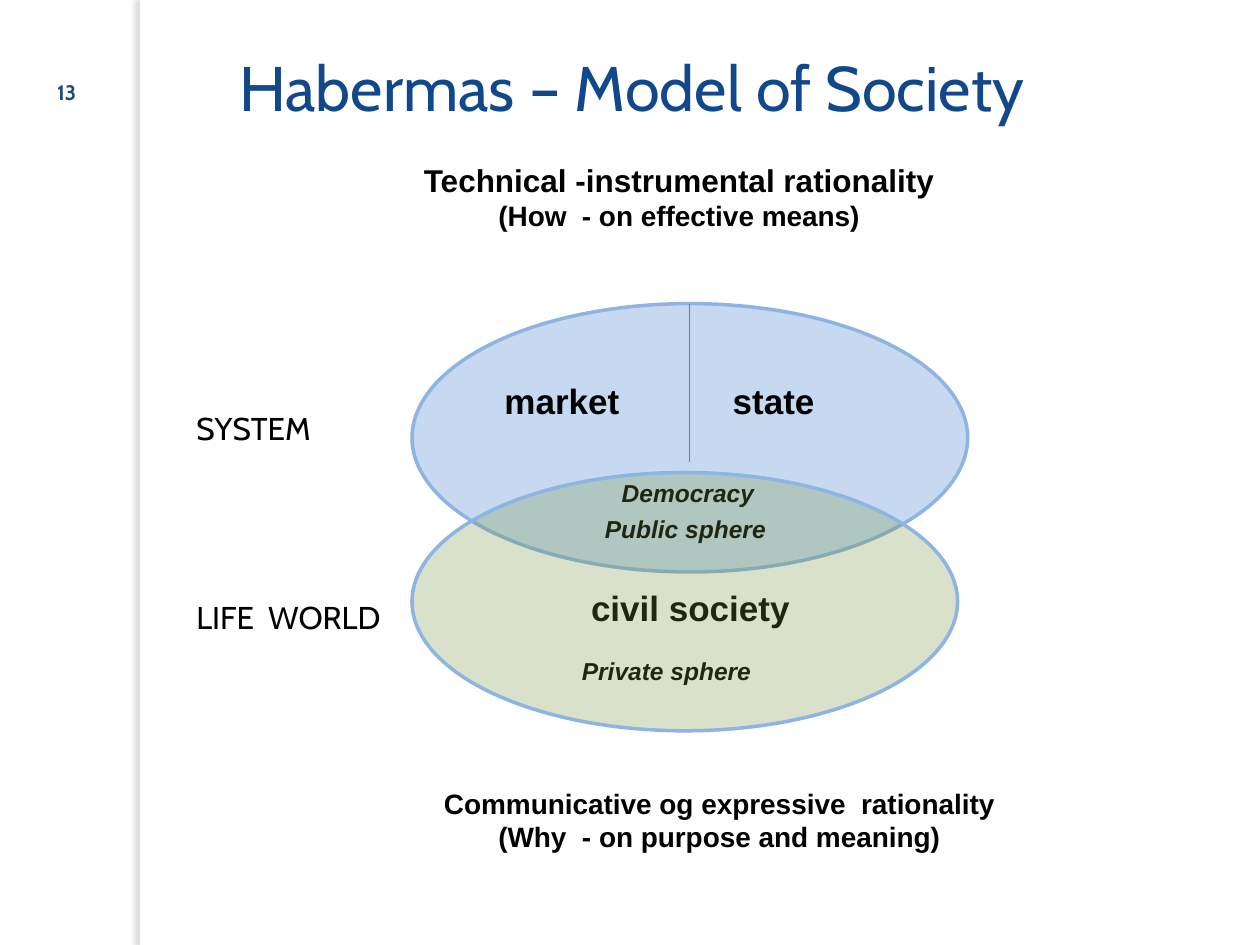
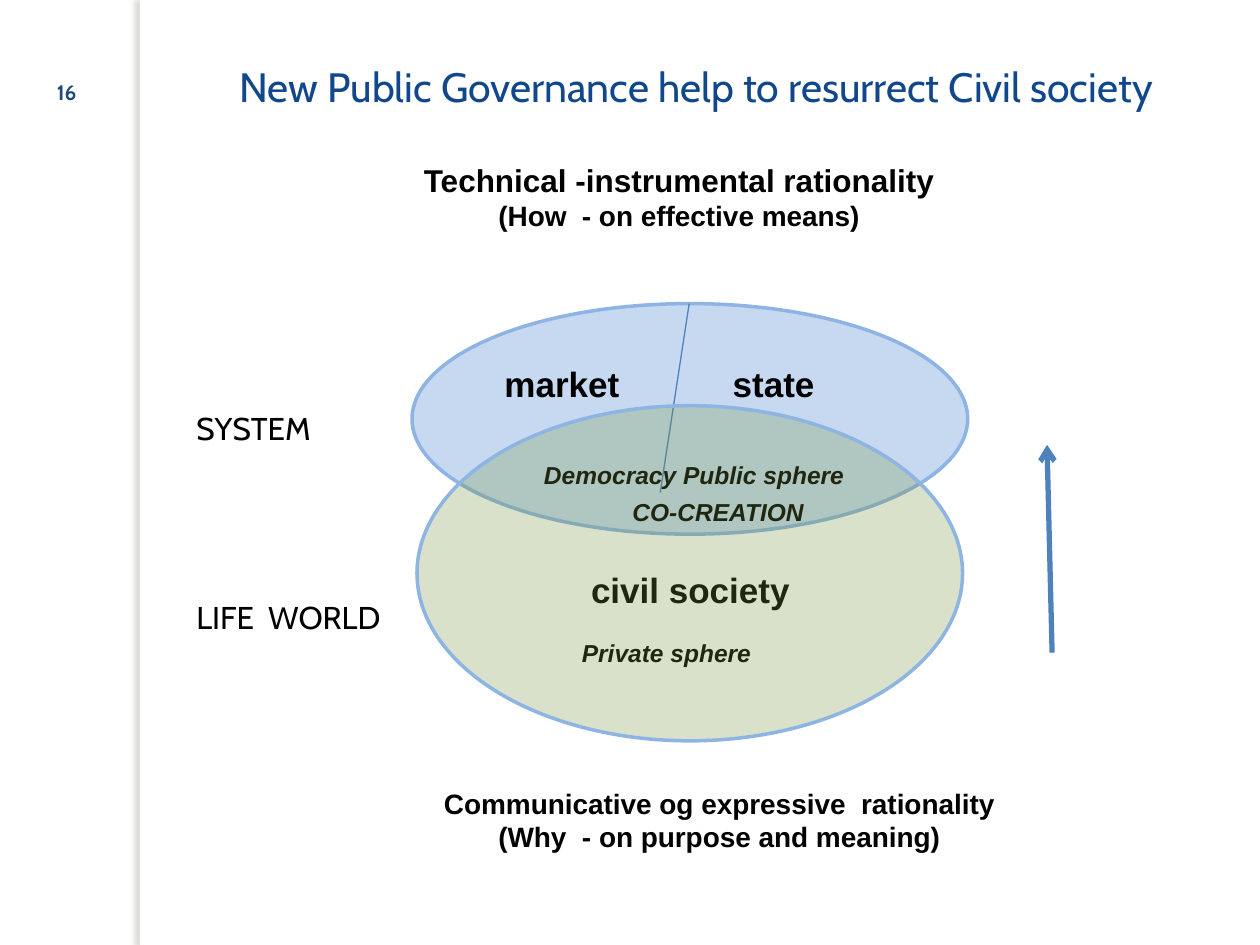
from dataclasses import dataclass

import lxml.etree
import pptx
import pptx.dml.color
import pptx.enum.shapes
import pptx.enum.text
import pptx.oxml.ns
import pptx.util

RGB = pptx.dml.color.RGBColor
SHAPE = pptx.enum.shapes.MSO_SHAPE
ALIGN = pptx.enum.text.PP_ALIGN
ANCHOR = pptx.enum.text.MSO_ANCHOR
qn = pptx.oxml.ns.qn

WHITE = RGB(0xFF, 0xFF, 0xFF)
BLACK = RGB(0x00, 0x00, 0x00)
TITLE_BLUE = RGB(0x11, 0x47, 0x8B)
NUMBER_BLUE = RGB(0x1F, 0x49, 0x7D)
SYSTEM_BLUE = RGB(0xC6, 0xD9, 0xF1)
LIFE_GREEN = RGB(0x77, 0x93, 0x3C)
OUTLINE_BLUE = RGB(0x8E, 0xB4, 0xE3)
LINE_BLUE = RGB(0x4F, 0x81, 0xBD)
HEADING_FONT, BODY_FONT = "Cabin", "Arial"

SLIDE_WIDTH = pptx.util.Inches(10)
SLIDE_HEIGHT = pptx.util.Inches(7.5)
COLUMNS, ROWS = 100, 75


@dataclass(frozen=True)
class Box:
    column: float
    row: float
    columns: float
    rows: float

    def emu(self) -> tuple:
        return (across(self.column), down(self.row),
                across(self.columns), down(self.rows))


@dataclass(frozen=True)
class TextStyle:
    size: float
    font: str = BODY_FONT
    color: RGB = BLACK
    bold: bool = True
    italic: bool = False
    align: ALIGN = ALIGN.CENTER
    anchor: ANCHOR = ANCHOR.MIDDLE


@dataclass(frozen=True)
class Label:
    text: str
    center: float
    middle: float
    style: TextStyle


@dataclass(frozen=True)
class Line:
    start: tuple
    end: tuple
    width: float = 0.75
    arrow: bool = False


@dataclass(frozen=True)
class SocietyModel:
    number: str
    title: str
    title_columns: float
    title_size: float
    system: Box
    life_world: Box
    divider: Line
    rise: float
    public_sphere: tuple
    arrows: tuple = ()


SPHERE = TextStyle(20)
SUBSPHERE = TextStyle(14, italic=True)
SIDE = TextStyle(18, HEADING_FONT, bold=False, align=ALIGN.LEFT)
NUMBER = TextStyle(12, HEADING_FONT, NUMBER_BLUE, anchor=ANCHOR.BOTTOM)
LARGE_NOTE = TextStyle(18, anchor=ANCHOR.TOP)
NOTE = TextStyle(16, anchor=ANCHOR.TOP)

SPHERES = (
    Label("market", 44.6, 31.8, SPHERE),
    Label("state", 61.4, 31.8, SPHERE),
    Label("civil society", 54.8, 48.2, SPHERE),
    Label("Private sphere", 52.9, 53.2, SUBSPHERE),
)
SIDES = (("SYSTEM", 34), ("LIFE  WORLD", 49))
RATIONALITIES = (
    (Box(28.7, 12.3, 50.4, 9.8),
     (("Technical -instrumental rationality", LARGE_NOTE),
      ("(How  - on effective means)", NOTE))),
    (Box(33.5, 61.9, 47.2, 9.4),
     (("Communicative og expressive  rationality", NOTE),
      ("(Why  - on purpose and meaning)", NOTE))),
)
MODELS = (
    SocietyModel(
        "13", "Habermas – Model of Society", 82, 36,
        Box(32.7, 24.1, 44.1, 21.3), Box(32.7, 37.5, 43.3, 20.5),
        Line((54.7, 24.1), (54.7, 36.7)), 0,
        (Label("Democracy", 54.6, 39.1, SUBSPHERE),
         Label("Public sphere", 54.4, 42, SUBSPHERE))),
    SocietyModel(
        "16", "New Public Governance help to resurrect Civil society", 79.3, 23.4,
        Box(32.7, 24.1, 44.1, 18.3), Box(33.1, 32.2, 43.3, 26.6),
        Line((54.7, 24.1), (52.4, 39.1)), 1.4,
        (Label("Democracy Public sphere", 55.1, 39.1, SUBSPHERE),
         Label("CO-CREATION", 57, 42, SUBSPHERE)),
        (Line((83.5, 51.8), (83.1, 35.3), 3, True),)),
)


def across(columns: float) -> int:
    return round(SLIDE_WIDTH * columns / COLUMNS)


def down(rows: float) -> int:
    return round(SLIDE_HEIGHT * rows / ROWS)


def write(frame, lines: tuple) -> None:
    frame.word_wrap = True
    frame.auto_size = pptx.enum.text.MSO_AUTO_SIZE.NONE
    frame.vertical_anchor = lines[0][1].anchor
    frame.text = "\n".join(text for text, style in lines)
    for paragraph, (text, style) in zip(frame.paragraphs, lines):
        paragraph.alignment = style.align
        for run in paragraph.runs:
            run.font.name = style.font
            run.font.size = pptx.util.Pt(style.size)
            run.font.bold = style.bold
            run.font.italic = style.italic
            run.font.color.rgb = style.color


def add_text(slide, box: Box, *lines: tuple) -> None:
    write(slide.shapes.add_textbox(*box.emu()).text_frame, lines)


def add_label(slide, label: Label, rise: float = 0) -> None:
    columns, rows = 34, 5
    box = Box(label.center - columns / 2, label.middle - rise - rows / 2, columns, rows)
    add_text(slide, box, (label.text, label.style))


def add_filled(slide, kind: SHAPE, box: Box, color: RGB):
    shape = slide.shapes.add_shape(kind, *box.emu())
    shape.shadow.inherit = False
    shape.fill.solid()
    shape.fill.fore_color.rgb = color
    return shape


def set_alpha(color_element, percent: int) -> None:
    lxml.etree.SubElement(color_element, qn("a:alpha"), val=str(percent * 1000))


def add_ellipse(slide, box: Box, color: RGB, opacity: int = 100) -> None:
    ellipse = add_filled(slide, SHAPE.OVAL, box, color)
    ellipse.line.color.rgb = OUTLINE_BLUE
    ellipse.line.width = pptx.util.Pt(2)
    if opacity < 100:
        set_alpha(ellipse.element.spPr.find(qn("a:solidFill"))[0], opacity)


def add_band(slide) -> None:
    band = add_filled(slide, SHAPE.RECTANGLE, Box(11.1, 0, 0.8, ROWS), WHITE)
    band.line.fill.background()
    effects = band.element.spPr.find(qn("a:effectLst"))
    reach = str(pptx.util.Pt(3))
    shadow = lxml.etree.SubElement(
        effects, qn("a:outerShdw"), blurRad=reach, dist=reach,
        dir=str(180 * 60000), algn="tl", rotWithShape="0")
    set_alpha(lxml.etree.SubElement(shadow, qn("a:srgbClr"), val="77756F"), 25)


def add_line(slide, line: Line) -> None:
    (start_column, start_row), (end_column, end_row) = line.start, line.end
    connector = slide.shapes.add_connector(
        pptx.enum.shapes.MSO_CONNECTOR.STRAIGHT,
        across(start_column), down(start_row), across(end_column), down(end_row))
    connector.line.color.rgb = LINE_BLUE
    connector.line.width = pptx.util.Pt(line.width)
    properties = connector.element.spPr
    if line.arrow:
        lxml.etree.SubElement(properties.find(qn("a:ln")), qn("a:tailEnd"), type="arrow")
    lxml.etree.SubElement(properties, qn("a:effectLst"))


def add_title(slide, model: SocietyModel) -> None:
    title = slide.shapes.title
    title.left, title.top, title.width, title.height = Box(
        18, 3, model.title_columns, 7.7).emu()
    style = TextStyle(model.title_size, HEADING_FONT, TITLE_BLUE,
                      bold=False, align=ALIGN.LEFT)
    write(title.text_frame, ((model.title, style),))


def build_slide(presentation, model: SocietyModel) -> None:
    slide = presentation.slides.add_slide(presentation.slide_layouts[5])
    slide.background.fill.solid()
    slide.background.fill.fore_color.rgb = WHITE
    add_band(slide)
    add_title(slide, model)
    add_text(slide, Box(2.8, 3.6, 5, 5.2), (model.number, NUMBER))
    add_ellipse(slide, model.system, SYSTEM_BLUE)
    add_line(slide, model.divider)
    for label in SPHERES + model.public_sphere:
        add_label(slide, label, model.rise)
    for box, lines in RATIONALITIES:
        add_text(slide, box, *lines)
    for side, middle in SIDES:
        add_text(slide, Box(14.6, middle - 2, 17.3, 4), (side, SIDE))
    add_ellipse(slide, model.life_world, LIFE_GREEN, 27)
    for arrow in model.arrows:
        add_line(slide, arrow)


def main() -> None:
    presentation = pptx.Presentation()
    presentation.slide_width = SLIDE_WIDTH
    presentation.slide_height = SLIDE_HEIGHT
    for model in MODELS:
        build_slide(presentation, model)
    presentation.save("out.pptx")


if __name__ == "__main__":
    main()
